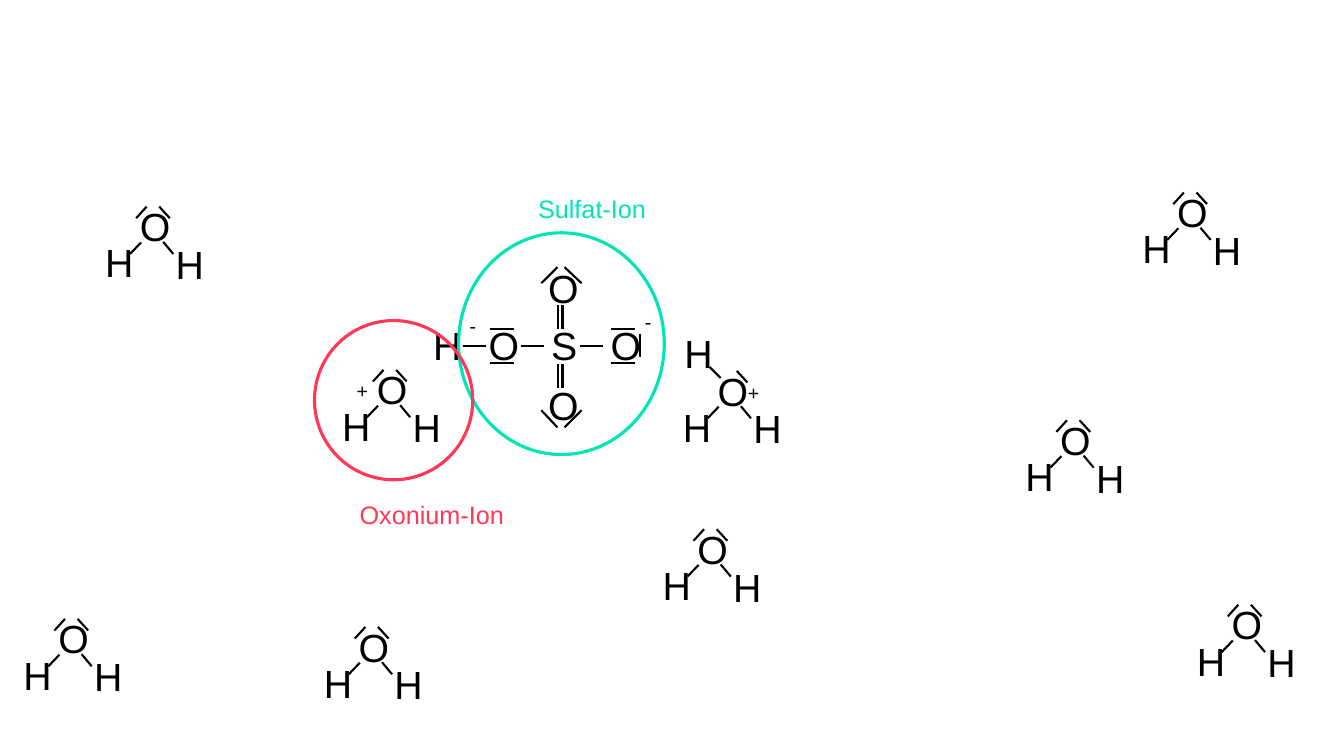
import pptx
import pptx.util
import pptx.dml.color
import pptx.enum.shapes
import pptx.oxml.ns
import lxml.etree

COLORS = {"ink": "000000", "sulfate": "00E5B6", "oxonium": "FF3859"}
CELL = pptx.util.Inches(0.1)
COLS, ROWS = 133.33, 75

prs = pptx.Presentation()
prs.slide_width, prs.slide_height = int(COLS * CELL), ROWS * CELL
s = prs.slides.add_slide(prs.slide_layouts[6])


def add_text(text, x, y, w=3.3, h=5.7, size=28, color="ink"):
    tb = s.shapes.add_textbox(*(int(v * CELL) for v in (x, y, w, h)))
    tf = tb.text_frame
    tf.word_wrap = True
    r = tf.paragraphs[0].add_run()
    r.text = text
    for name, value in {"name": "Arial", "size": pptx.util.Pt(size)}.items():
        setattr(r.font, name, value)
    r.font.color.rgb = pptx.dml.color.RGBColor.from_string(COLORS[color])


def add_line(x1, y1, x2, y2):
    cx = s.shapes.add_connector(pptx.enum.shapes.MSO_CONNECTOR.STRAIGHT,
                                *(int(v * CELL) for v in (x1, y1, x2, y2)))
    cx.line.width = pptx.util.Pt(1.5)
    cx.line.color.rgb = pptx.dml.color.RGBColor.from_string(COLORS["ink"])
    lxml.etree.SubElement(cx._element.spPr, pptx.oxml.ns.qn("a:effectLst"))


water_atoms = [("H", -3.45, 3.6), ("H", 3.55, 3.75), ("O", 0, 0)]
water_lines = [(0, 5.6, 1.1, 4.45), (4.3, 5.6, 3.3, 4.4), (3.95, 2.05, 2.9, 0.9)]
left_pair = (0.6, 2.05, 1.65, 0.9)
third_bond = (0.2, 0.5, 1.3, 1.6)

molecules = [
    (36.4, 35.8, left_pair), (12.9, 19.6, left_pair), (34.6, 61.3, left_pair),
    (104.2, 40.8, left_pair), (68.2, 51.6, left_pair), (70.2, 35.9, third_bond),
    (115.8, 18.2, left_pair), (121.2, 59.1, left_pair), (4.8, 60.5, left_pair),
]
for x, y, extra_line in molecules:
    for atom, dx, dy in water_atoms:
        add_text(atom, x + dx, y + dy)
    for x1, y1, x2, y2 in water_lines + [extra_line]:
        add_line(x + x1, y + y1, x + x2, y + y2)

sulfate_atoms = [("H", 42, 31.4), ("H", 66.9, 32.2), ("S", 53.7, 31.4),
                 ("O", 53.4, 25.7), ("O", 53.4, 37.3),
                 ("O", 59.6, 31.4), ("O", 47.5, 31.4)]
for atom, x, y in sulfate_atoms:
    add_text(atom, x, y)

for x in (45.9, 51.7, 57.5):
    add_line(x, 34.3, x + 2.3, 34.3)
for x in (55.4, 55.8):
    for y in (30.3, 36.1):
        add_line(x, y, x, y + 2.35)
for x in (48.6, 60.6):
    for y in (32.6, 36):
        add_line(x, y, x + 2.35, y)
for outer, inner in ((28.1, 26.5), (40.7, 42.4)):
    add_line(53.7, outer, 55.3, inner)
    add_line(57.7, outer, 56, inner)
add_line(63.5, 33.1, 63.5, 35.4)

for sign, x, y in [("+", 73.2, 37.3), ("-", 63, 30.3),
                   ("+", 34.4, 37.1), ("-", 45.6, 30.7)]:
    add_text(sign, x, y, 2.3, 3.4, 14)

ions = [
    ("Sulfat-Ion", "sulfate", (45.5, 23.1, 20.4, 22), (52.4, 18.7)),
    ("Oxonium-Ion", "oxonium", (31.2, 31.8, 15.7, 15.8), (34.7, 49)),
]
for label, color, ring, (x, y) in ions:
    sp = s.shapes.add_shape(pptx.enum.shapes.MSO_SHAPE.OVAL,
                            *(int(v * CELL) for v in ring))
    sp.shadow.inherit = False
    sp.fill.background()
    sp.line.width = pptx.util.Pt(2.25)
    sp.line.color.rgb = pptx.dml.color.RGBColor.from_string(COLORS[color])
    add_text(label, x, y, 22, 4, 18, color)

prs.save("out.pptx")
